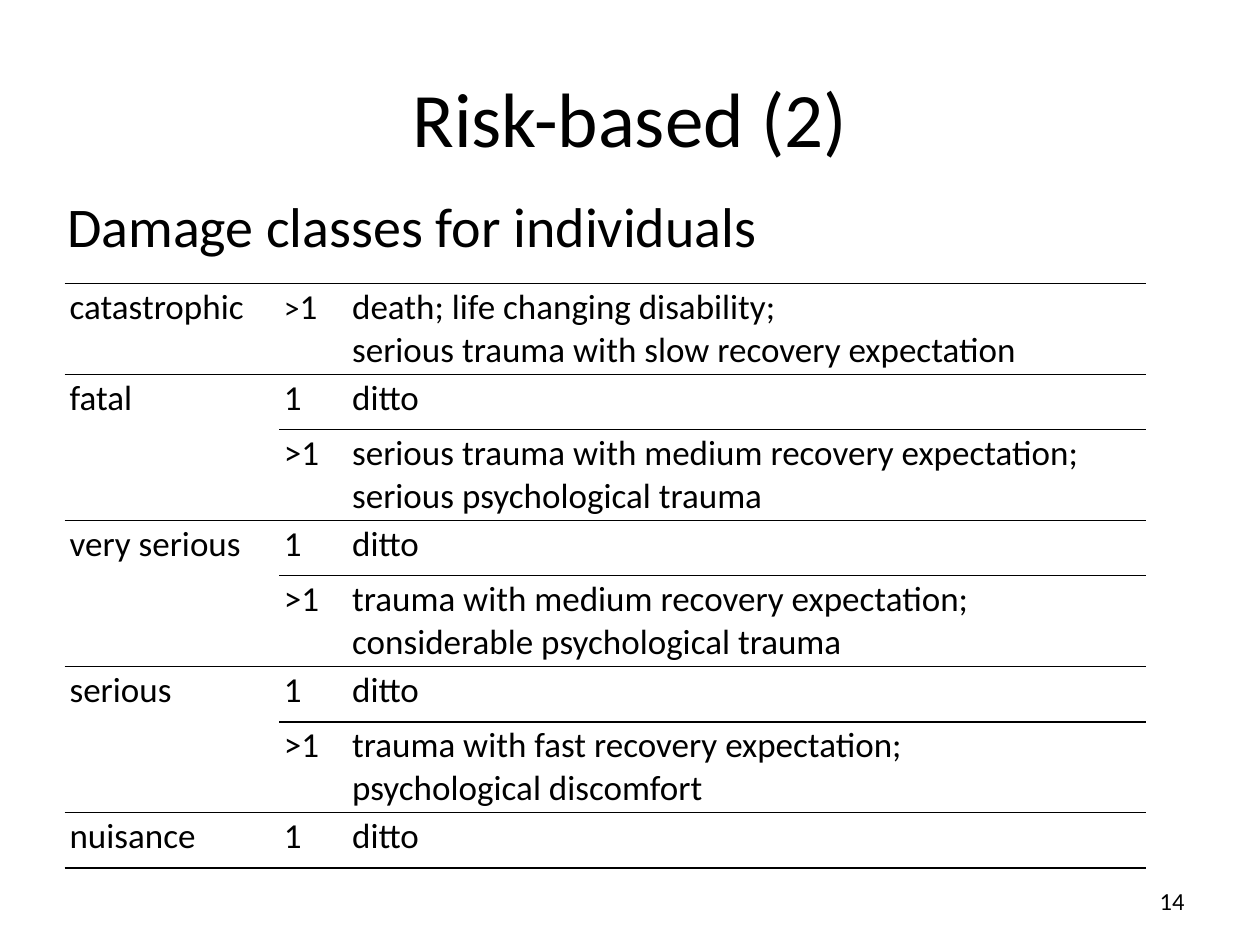
from pptx import Presentation
from pptx.dml.color import RGBColor
from pptx.enum.text import MSO_ANCHOR, PP_ALIGN
from pptx.oxml import parse_xml
from pptx.oxml.ns import nsdecls
from pptx.util import Pt

BLACK = RGBColor(0, 0, 0)
FONT = "Calibri"
ROWS = [
    ("catastrophic", ">1", "death; life changing disability; \vserious trauma with slow recovery expectation"),
    ("fatal", "1", "ditto"),
    ("", ">1", "serious trauma with medium recovery expectation; serious psychological trauma"),
    ("very serious", "1", "ditto"),
    ("", ">1", "trauma with medium recovery expectation; considerable psychological trauma"),
    ("serious", "1", "ditto"),
    ("", ">1", "trauma with fast recovery expectation; \vpsychological discomfort"),
    ("nuisance", "1", "ditto"),
]


def style(font, size):
    font.name = FONT
    font.size = Pt(size)
    font.color.rgb = BLACK


def set_border(cell, side, visible):
    fill = f'<a:solidFill><a:srgbClr val="{BLACK}"/></a:solidFill>' if visible else "<a:noFill/>"
    cell._tc.get_or_add_tcPr().append(
        parse_xml(f'<a:ln{side} {nsdecls("a")} w="{Pt(1)}">{fill}</a:ln{side}>'))


prs = Presentation()
prs.slide_width, prs.slide_height = Pt(720), Pt(540)
s = prs.slides.add_slide(prs.slide_layouts[5])

title = s.shapes.title
title.left, title.top, title.width, title.height = Pt(36), Pt(21.6), Pt(648), Pt(90)
title.text_frame.text = "Risk-based (2)"
title.text_frame.vertical_anchor = MSO_ANCHOR.MIDDLE
p = title.text_frame.paragraphs[0]
p.alignment = PP_ALIGN.CENTER
style(p.font, 44)

for text, size, align, anchor, box in [
    ("Damage classes for individuals", 32, PP_ALIGN.LEFT, MSO_ANCHOR.TOP, (31.2, 105.8, 647, 42)),
    ("14", 14, PP_ALIGN.RIGHT, MSO_ANCHOR.MIDDLE, (516, 500.5, 168, 28.8)),
]:
    tf = s.shapes.add_textbox(*map(Pt, box)).text_frame
    tf.word_wrap = True
    tf.vertical_anchor = anchor
    tf.text = text
    p = tf.paragraphs[0]
    p.alignment = align
    style(p.font, size)

table = s.shapes.add_table(len(ROWS), 3, Pt(37), Pt(162), Pt(618), Pt(334)).table
table.first_row = table.horz_banding = False
for column, width in zip(table.columns, (122.5, 39, 456.5)):
    column.width = Pt(width)

for i, row in enumerate(ROWS):
    table.rows[i].height = Pt(31.5 if row[1] == "1" else 52)
    for j, text in enumerate(row):
        cell = table.cell(i, j)
        cell.margin_left = cell.margin_right = Pt(2.8)
        cell.margin_top = cell.margin_bottom = Pt(1.5)
        for side in "LRTB":
            inside_group = j == 0 and (
                side == "T" and not text
                or side == "B" and i + 1 < len(ROWS) and not ROWS[i + 1][0])
            set_border(cell, side, side in "TB" and not inside_group)
        cell.fill.background()
        p = cell.text_frame.paragraphs[0]
        if i == 0 and j == 1:
            for char in text:
                p.add_run().text = char
        else:
            p.text = text
        for r in p.runs:
            style(r.font, 18 if r.text == ">" else 20)

for i, row in enumerate(ROWS):
    if not row[0]:
        table.cell(i - 1, 0).merge(table.cell(i, 0))

prs.save("out.pptx")
